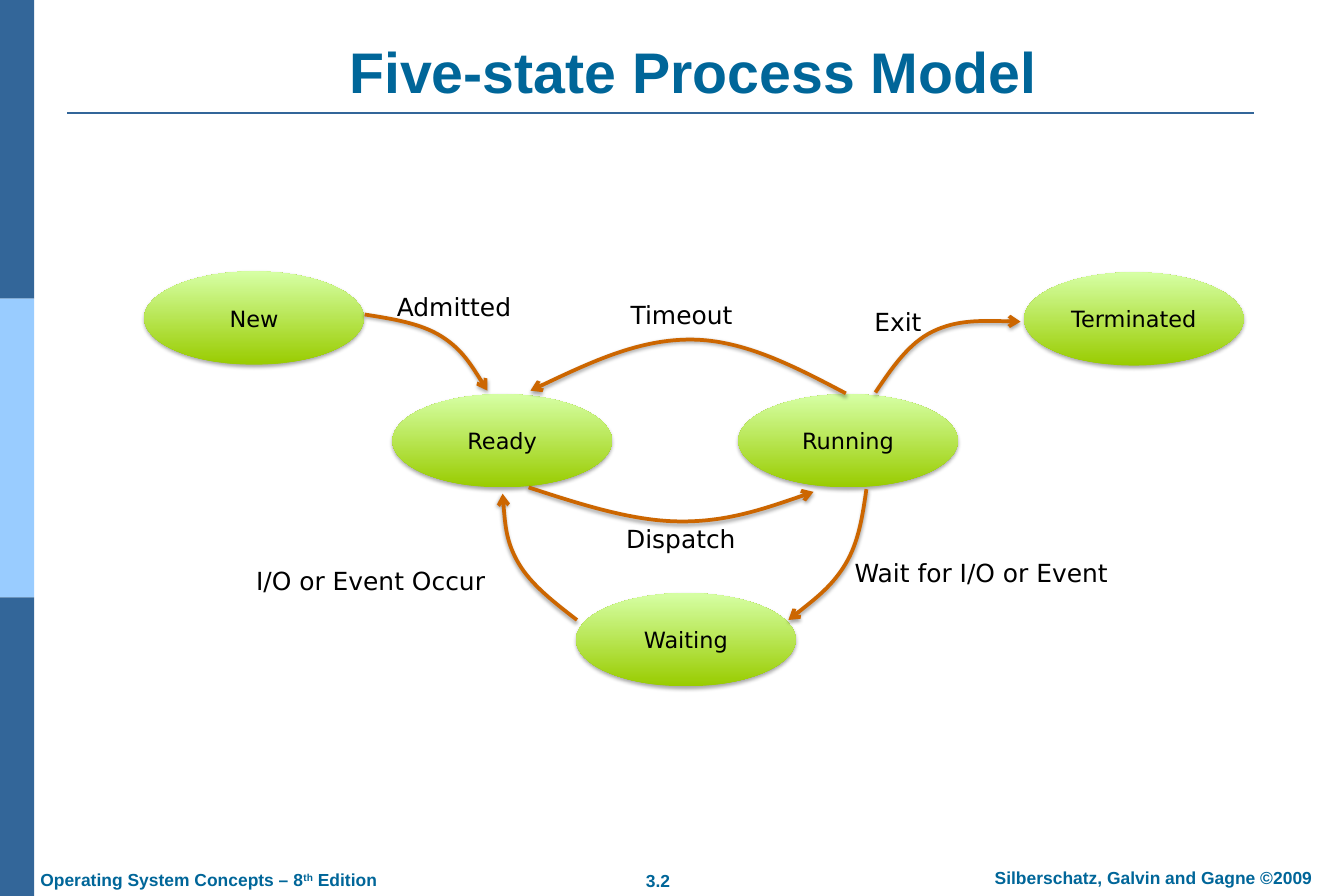
import dataclasses

import lxml.etree
import pptx
import pptx.dml.color
import pptx.enum.shapes
import pptx.enum.text
import pptx.oxml.ns
import pptx.util

Inches = pptx.util.Inches
qn = pptx.oxml.ns.qn
Sub = lxml.etree.SubElement
Align = pptx.enum.text.PP_ALIGN
Anchor = pptx.enum.text.MSO_ANCHOR
Fit = pptx.enum.text.MSO_AUTO_SIZE
Kind = pptx.enum.shapes.MSO_SHAPE


def rgb(code):
    return pptx.dml.color.RGBColor.from_string(code)


@dataclasses.dataclass(frozen=True)
class Theme:
    head: str = "Arial"
    body: str = "DejaVu Sans"
    title: int = 46
    label: int = 20
    state: int = 18
    foot: int = 14
    ink: str = "000000"
    blue: str = "006699"
    dark: str = "336699"
    light: str = "99CCFF"
    arrow: str = "CC6600"
    low: str = "99CC00"
    high: str = "D6FFA5"


T = Theme()
PAD = {"margin_left": Inches(0.14), "margin_right": Inches(0.14),
       "margin_top": Inches(0.07), "margin_bottom": Inches(0.07)}
HEAD = {"name": T.head, "bold": True}
BODY = {"name": T.body}
# Width and height of a state
WIDE, HIGH = 2.45, 1.04

# Places are offsets from the corner of the diagram
STATES = [
    ("New", 0.01, 0.03), ("Ready", 2.78, 1.4), ("Running", 6.64, 1.4),
    ("Waiting", 4.83, 3.62), ("Terminated", 9.83, 0.04),
]
# Start, middle and end of each move
MOVES = [
    ((2.47, 0.51), (3.32, 0.75), (3.84, 1.36)),
    ((8.17, 1.38), (8.81, 0.7), (9.79, 0.59)),
    ((7.84, 1.39), (6.12, 0.79), (4.32, 1.36)),
    ((4.3, 2.44), (5.97, 2.82), (7.48, 2.49)),
    ((4.84, 3.92), (4.19, 3.29), (4.01, 2.51)),
    ((8.07, 2.46), (7.84, 3.29), (7.2, 3.92)),
]
LABELS = [
    ("Admitted", 2.73, 0.21, 1.48), ("Timeout", 5.34, 0.29, 1.4),
    ("Exit", 8.06, 0.37, 0.76), ("Dispatch", 5.29, 2.79, 1.47),
    ("Wait for I/O or Event", 7.84, 3.18, 3.27),
    ("I/O or Event Occur", 1.16, 3.26, 2.97),
]


def apply(obj, vals):
    for key, val in vals.items():
        setattr(obj, key, val)


def write(frame, text, size, color, font, align=Align.LEFT):
    """Fill the first paragraph; text is a string or a list of runs."""
    para = frame.paragraphs[0]
    para.alignment = align
    runs = [text] if isinstance(text, str) else text
    for part in runs:
        run = para.add_run()
        run.text = part
        apply(run.font, {"size": pptx.util.Pt(size), **font})
        run.font.color.rgb = rgb(color)
    return para


def label(slide, box, text, size, color, font, align=Align.LEFT,
          wrap=False, pad=None):
    frame = slide.shapes.add_textbox(*map(Inches, box)).text_frame
    apply(frame, {"word_wrap": wrap, "auto_size": Fit.SHAPE_TO_FIT_TEXT,
                  **(pad or {})})
    return write(frame, text, size, color, font, align)


def shade(shape):
    shape.shadow.inherit = False
    effects = shape.element.spPr.find(qn("a:effectLst"))
    outer = Sub(effects, qn("a:outerShdw"), blurRad="40000", dist="23000",
                dir="5400000", rotWithShape="0")
    tint = Sub(outer, qn("a:srgbClr"), val=T.ink)
    Sub(tint, qn("a:alpha"), val="35000")


def side(slide, box):
    """Three equal bars down the left edge."""
    x, y, w, h = box
    for i, color in enumerate((T.dark, T.light, T.dark)):
        bar = slide.shapes.add_shape(
            Kind.RECTANGLE, *map(Inches, (x, y + i * h / 3, w, h / 3)))
        bar.shadow.inherit = False
        bar.fill.solid()
        bar.fill.fore_color.rgb = rgb(color)
        bar.line.fill.background()


def header(slide, box):
    """Title above a thin rule."""
    x, y, w, h = box
    title = slide.shapes.title
    place = map(Inches, (x + 0.46, y, 13.04, 0.84))
    apply(title, dict(zip(("left", "top", "width", "height"), place)))
    apply(title.text_frame, {"vertical_anchor": Anchor.BOTTOM, "word_wrap": True,
                             "auto_size": Fit.NONE, **PAD})
    write(title.text_frame, "Five-state Process Model", T.title, T.blue,
          HEAD, Align.CENTER)
    rule = slide.shapes.add_connector(
        pptx.enum.shapes.MSO_CONNECTOR.STRAIGHT,
        *map(Inches, (x, y + h, x + w, y + h)))
    rule.line.color.rgb = rgb(T.dark)
    rule.line.width = pptx.util.Pt(1.5)
    Sub(rule.element.spPr, qn("a:effectLst"))


def footer(slide, box):
    """Book, page number and copyright line."""
    x, y, w, h = box
    look = (T.foot, T.blue, HEAD)
    book = label(slide, (x, y + 0.02, 4.09, h),
                 ["Operating System Concepts – 8", "th", " Edition"],
                 *look, pad=PAD)
    book.runs[1].font.element.set("baseline", "30000") if hasattr(
        book.runs[1].font, "element") else book.runs[1]._r.get_or_add_rPr().set(
        "baseline", "30000")
    label(slide, (x + 6.69, y + 0.03, 0.69, h), "3.2", *look,
          align=Align.CENTER, pad=PAD)
    label(slide, (x + w - 4.45, y, 4.45, h),
          "Silberschatz, Galvin and Gagne ©2009", *look,
          align=Align.CENTER, wrap=True, pad=PAD)


def state(slide, box, text):
    oval = slide.shapes.add_shape(Kind.OVAL, *map(Inches, box))
    oval.fill.gradient()
    oval.fill.gradient_angle = 90
    for stop, color in zip(oval.fill.gradient_stops, (T.low, T.high)):
        stop.color.rgb = rgb(color)
    oval.line.fill.background()
    shade(oval)
    apply(oval.text_frame, {"word_wrap": False,
                            "vertical_anchor": Anchor.MIDDLE})
    write(oval.text_frame, text, T.state, T.ink, BODY, Align.CENTER)


def curve(slide, start, mid, end):
    """Smooth arrow through three points."""
    def half(a, b):
        return tuple((p + q) / 2 for p, q in zip(a, b))

    step = [(q - p) / 6 for p, q in zip(start, end)]
    near = tuple(m - s for m, s in zip(mid, step))
    far = tuple(m + s for m, s in zip(mid, step))
    knots = [half(start, near), near, mid, far, half(far, end), end]
    form = slide.shapes.build_freeform(*map(Inches, start))
    form.add_line_segments([tuple(map(Inches, k)) for k in knots], close=False)
    arrow = form.convert_to_shape()

    # Join each three points into one Bezier segment
    track = arrow.element.spPr.find(".//" + qn("a:path"))
    lines = track.findall(qn("a:lnTo"))
    for i in range(0, len(lines), 3):
        bend = Sub(track, qn("a:cubicBezTo"))
        for line in lines[i:i + 3]:
            bend.append(line[0])
            track.remove(line)

    arrow.fill.background()
    arrow.line.color.rgb = rgb(T.arrow)
    arrow.line.width = pptx.util.Pt(3)
    Sub(arrow.element.spPr.find(qn("a:ln")), qn("a:tailEnd"), type="arrow")
    shade(arrow)


def diagram(slide, box):
    """States, the moves between them, and their labels."""
    x, y = box[:2]
    for text, dx, dy in STATES:
        state(slide, (x + dx, y + dy, WIDE, HIGH), text)
    for move in MOVES:
        curve(slide, *[(x + dx, y + dy) for dx, dy in move])
    for text, dx, dy, w in LABELS:
        label(slide, (x + dx, y + dy, w, 0.44), text, T.label, T.ink, BODY)


def main():
    deck = pptx.Presentation()
    apply(deck, {"slide_width": Inches(15), "slide_height": Inches(10)})
    slide = deck.slides.add_slide(deck.slide_layouts[5])
    side(slide, (0, 0, 0.38, 10))
    header(slide, (0.75, 0.4, 13.25, 0.86))
    footer(slide, (0.31, 9.61, 14.79, 0.38))
    diagram(slide, (1.6, 3, 12.28, 4.66))
    deck.save("out.pptx")


if __name__ == "__main__":
    main()
